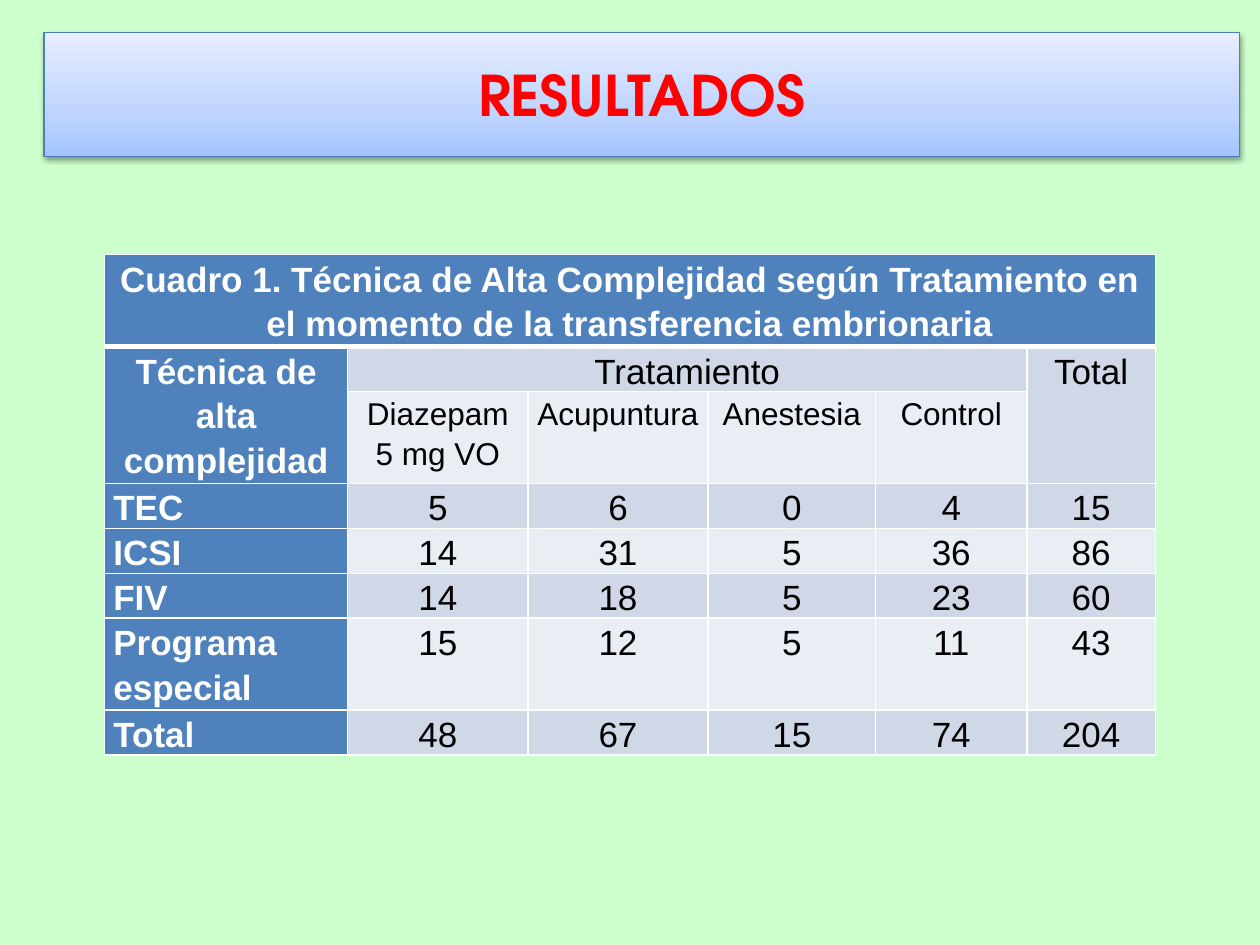
from pptx import Presentation
from pptx.dml.color import RGBColor
from pptx.enum.text import MSO_ANCHOR, MSO_AUTO_SIZE, PP_ALIGN
from pptx.oxml import parse_xml
from pptx.oxml.ns import nsdecls
from pptx.util import Inches, Pt

MINT = RGBColor(0xCC, 0xFF, 0xCC)
RED = RGBColor(0xFF, 0x00, 0x00)
BLUE = RGBColor(0x4F, 0x81, 0xBD)
OUTLINE = RGBColor(0x4B, 0x7E, 0xBC)
DARK_BAND = RGBColor(0xD0, 0xD8, 0xE8)
LIGHT_BAND = RGBColor(0xE9, 0xED, 0xF4)
WHITE = RGBColor(0xFF, 0xFF, 0xFF)
BLACK = RGBColor(0x00, 0x00, 0x00)
BANNER_STOPS = (
    (0, RGBColor(0xA4, 0xC4, 0xFF)),
    (35, RGBColor(0xBF, 0xD4, 0xFF)),
    (100, RGBColor(0xE6, 0xEE, 0xFF)),
)

COLUMN_WIDTHS = (1.93, 1.43, 1.43, 1.33, 1.2, 1.02)
ROW_HEIGHTS = (0.73, 0.35, 0.73, 0.35, 0.35, 0.35, 0.73, 0.35)
CAPTION = (
    "Cuadro 1. Técnica de Alta Complejidad según Tratamiento en "
    "el momento de la transferencia embrionaria"
)
ROWS = (
    (CAPTION,),
    ("Técnica de alta complejidad", "Tratamiento", "", "", "", "Total"),
    ("", "Diazepam 5 mg VO", "Acupuntura", "Anestesia", "Control"),
    ("TEC", 5, 6, 0, 4, 15),
    ("ICSI", 14, 31, 5, 36, 86),
    ("FIV", 14, 18, 5, 23, 60),
    ("Programa especial", 15, 12, 5, 11, 43),
    ("Total", 48, 67, 15, 74, 204),
)
MERGES = (((0, 0), (0, 5)), ((1, 0), (2, 0)), ((1, 1), (1, 4)), ((1, 5), (2, 5)))


def apply_format(target, values):
    """Set each named attribute on the target."""
    for name, value in values.items():
        setattr(target, name, value)


def write_text(frame, text, alignment, spacing, color, font):
    """Write one formatted paragraph into a text frame."""
    para = frame.paragraphs[0]
    apply_format(para, {"alignment": alignment, "line_spacing": spacing})
    span = para.add_run()
    span.text = text
    apply_format(span.font, font)
    span.font.color.rgb = color


def style_banner(banner):
    """Give the banner rounded corners, a gradient, an outline and a shadow."""
    stops = "".join(
        f'<a:gs pos="{place * 1000}"><a:srgbClr val="{color}"/></a:gs>'
        for place, color in BANNER_STOPS
    )
    geometry = (
        f'<a:prstGeom {nsdecls("a")} prst="flowChartAlternateProcess">'
        "<a:avLst/></a:prstGeom>"
    )
    gradient = (
        f'<a:gradFill {nsdecls("a")} rotWithShape="1"><a:gsLst>{stops}</a:gsLst>'
        '<a:lin ang="16200000" scaled="0"/></a:gradFill>'
    )
    shadow = (
        f'<a:effectLst {nsdecls("a")}><a:outerShdw blurRad="{Pt(3.1)}" '
        f'dist="{Pt(1.6)}" dir="5400000" rotWithShape="0"><a:srgbClr val="000000">'
        '<a:alpha val="38000"/></a:srgbClr></a:outerShdw></a:effectLst>'
    )
    properties = banner.element.spPr
    for markup in (geometry, gradient):
        properties.append(parse_xml(markup))
    banner.line.color.rgb = OUTLINE
    banner.line.width = Pt(0.75)
    properties.append(parse_xml(shadow))


def add_title(page, text):
    """Turn the title placeholder into the banner."""
    banner = page.shapes.title
    apply_format(banner, {
        "left": Inches(0.35), "top": Inches(0.26),
        "width": Inches(9.49), "height": Inches(0.98),
    })
    style_banner(banner)
    frame = banner.text_frame
    apply_format(frame, {
        "auto_size": MSO_AUTO_SIZE.NONE, "word_wrap": False,
        "vertical_anchor": MSO_ANCHOR.MIDDLE,
    })
    font = {"name": "TeX Gyre Adventor", "size": Pt(32), "bold": True}
    write_text(frame, text, PP_ALIGN.CENTER, 1.0, RED, font)


def set_borders(cell, widths):
    """Draw white cell borders of the given widths in points."""
    properties = cell._tc.get_or_add_tcPr()
    for side, width in widths.items():
        properties.append(parse_xml(
            f'<a:ln{side} {nsdecls("a")} w="{Pt(width)}"><a:solidFill>'
            f'<a:srgbClr val="{WHITE}"/></a:solidFill></a:ln{side}>'
        ))


def format_cell(cell, row, column):
    """Set the margins, borders and fill that follow from the cell's place."""
    apply_format(cell, {
        "margin_left": Inches(0.07), "margin_right": Inches(0.07),
        "margin_top": 0, "margin_bottom": 0,
    })
    set_borders(cell, {
        "L": 1, "R": 1, "T": 3 if row == 1 else 1, "B": 3 if row == 0 else 1,
    })
    band = DARK_BAND if row % 2 else LIGHT_BAND
    cell.fill.solid()
    cell.fill.fore_color.rgb = BLUE if row == 0 or column == 0 else band


def add_results_table(page):
    """Add the table of techniques by treatment."""
    table = page.shapes.add_table(
        len(ROW_HEIGHTS), len(COLUMN_WIDTHS), Inches(0.83), Inches(2.02),
        Inches(sum(COLUMN_WIDTHS)), Inches(sum(ROW_HEIGHTS)),
    ).table
    for column, width in zip(table.columns, COLUMN_WIDTHS):
        column.width = Inches(width)
    for row, height in zip(table.rows, ROW_HEIGHTS):
        row.height = Inches(height)
    for first, last in MERGES:
        table.cell(*first).merge(table.cell(*last))
    for row in range(len(ROW_HEIGHTS)):
        for column in range(len(COLUMN_WIDTHS)):
            format_cell(table.cell(row, column), row, column)
    for row, values in enumerate(ROWS):
        for column, value in enumerate(values):
            if value == "":
                continue
            heading = row == 0 or column == 0
            alignment = PP_ALIGN.LEFT if row > 2 and column == 0 else PP_ALIGN.CENTER
            font = {"name": "Arial", "size": Pt(18 if row == 2 else 20), "bold": heading}
            write_text(table.cell(row, column).text_frame, str(value), alignment,
                       1.15, WHITE if heading else BLACK, font)


def main():
    """Build and save the results slide."""
    deck = Presentation()
    apply_format(deck, {"slide_width": Inches(10), "slide_height": Inches(7.5)})
    page = deck.slides.add_slide(deck.slide_layouts[5])
    page.background.fill.solid()
    page.background.fill.fore_color.rgb = MINT
    add_results_table(page)
    add_title(page, "RESULTADOS")
    deck.save("out.pptx")


if __name__ == "__main__":
    main()
